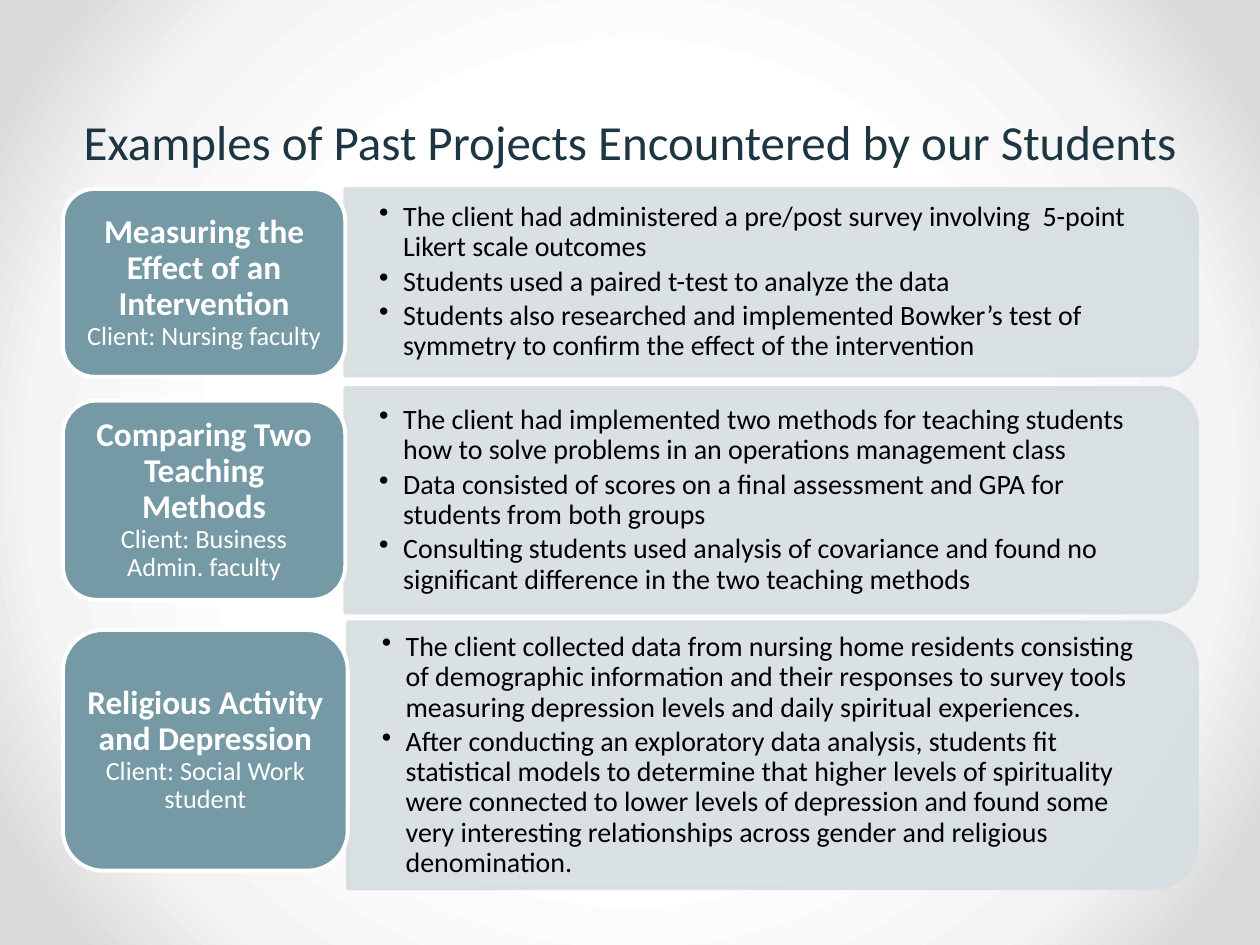
import pptx
import pptx.util
import pptx.dml.color
import pptx.enum.shapes
import pptx.enum.text
import pptx.oxml
import pptx.oxml.ns
from lxml import etree

Inches, Pt = pptx.util.Inches, pptx.util.Pt
SHAPE = pptx.enum.shapes.MSO_SHAPE
ALIGN = pptx.enum.text.PP_ALIGN
ANCHOR = pptx.enum.text.MSO_ANCHOR
qn = pptx.oxml.ns.qn


def rgb(value):
    return pptx.dml.color.RGBColor.from_string(value)


class Deck:
    font = "Calibri"
    title_color, panel_color, label_color = "1D3641", "D6DEE1", "759AA5"

    def __init__(self):
        self.prs = pptx.Presentation()
        self.prs.slide_width, self.prs.slide_height = Inches(10), Inches(7.5)
        self.s = self.prs.slides.add_slide(self.prs.slide_layouts[5])

    def style(self, font, size, color, bold=False):
        font.name, font.size, font.bold = self.font, Pt(size), bold
        font.color.rgb = rgb(color)

    def frame(self, sp, inset_x, inset_y):
        tf = sp.text_frame
        tf.word_wrap = True
        tf.vertical_anchor = ANCHOR.MIDDLE
        tf.margin_left = tf.margin_right = Inches(inset_x)
        tf.margin_top = tf.margin_bottom = Inches(inset_y)
        return tf

    def background(self, stops):
        fill = self.s.background.fill
        fill.solid()
        old = self.s._element.find(".//" + qn("p:bgPr")).find(qn("a:solidFill"))
        gs = "".join(f'<a:gs pos="{pos * 1000}"><a:srgbClr val="{color}"/></a:gs>'
                     for pos, color in stops)
        grad = pptx.oxml.parse_xml(
            f'<a:gradFill {pptx.oxml.ns.nsdecls("a")} rotWithShape="1">'
            f'<a:gsLst>{gs}</a:gsLst><a:path path="circle">'
            '<a:fillToRect l="50000" t="50000" r="50000" b="50000"/>'
            '</a:path></a:gradFill>')
        old.getparent().replace(old, grad)

    def title(self, text, x, y, w, h):
        sp = self.s.shapes.title
        sp.left, sp.top, sp.width, sp.height = map(Inches, (x, y, w, h))
        tf = self.frame(sp, 0.1, 0.05)
        tf.text = text
        p = tf.paragraphs[0]
        p.alignment = ALIGN.CENTER
        self.style(p.font, 28, self.title_color)

    def box(self, kind, fill, line, x, y, w, h):
        sp = self.s.shapes.add_shape(kind, *map(Inches, (x, y, w, h)))
        sp.shadow.inherit = False
        sp.fill.solid()
        sp.fill.fore_color.rgb = rgb(fill)
        sp.line.color.rgb = rgb(line)
        sp.line.width = Pt(2.25)
        return sp

    def panel(self, x, y, w, h):
        sp = self.box(SHAPE.ROUND_2_SAME_RECTANGLE, self.panel_color, self.panel_color,
                      x + (w - h) / 2, y + (h - w) / 2, h, w)
        sp.rotation = 90
        for clr in sp._element.spPr.iter(qn("a:srgbClr")):
            etree.SubElement(clr, qn("a:alpha")).set("val", "90000")

    def bullets(self, items, x, y, w, h):
        sp = self.s.shapes.add_textbox(*map(Inches, (x, y, w, h)))
        tf = self.frame(sp, 0.27, 0.14)
        for i, item in enumerate(items):
            p = tf.add_paragraph() if i else tf.paragraphs[0]
            p.text = item
            p.line_spacing = 0.9
            p.space_after = Pt(2.4)
            self.style(p.font, 16, "000000")
            pPr = p._p.get_or_add_pPr()
            pPr.set("marL", str(Inches(0.19)))
            pPr.set("indent", str(-Inches(0.19)))
            bullet = etree.Element(qn("a:buChar"))
            bullet.set("char", "•")
            pPr.find(qn("a:defRPr")).addprevious(bullet)

    def label(self, heading, client, x, y, w, h):
        sp = self.box(SHAPE.ROUNDED_RECTANGLE, self.label_color, "FFFFFF", x, y, w, h)
        p = self.frame(sp, 0.08, 0.04).paragraphs[0]
        p.alignment = ALIGN.CENTER
        p.line_spacing = 0.9
        r = p.add_run()
        r.text = heading
        self.style(r.font, 19, "FFFFFF", True)
        p.add_line_break()
        r = p.add_run()
        r.text = client
        self.style(r.font, 15, "FFFFFF")


PROJECTS = [
    ("Measuring the Effect of an Intervention", "Client: Nursing faculty",
     ["The client had administered a pre/post survey involving  5-point Likert scale outcomes",
      "Students used a paired t-test to analyze the data",
      "Students also researched and implemented Bowker’s test of symmetry to confirm "
      "the effect of the intervention"],
     2.74, (1.5, 1.49), (1.5, 1.48)),
    ("Comparing Two Teaching Methods", "Client: Business Admin. faculty",
     ["The client had implemented two methods for teaching students how to solve problems "
      "in an operations management class",
      "Data consisted of scores on a final assessment and GPA for students from both groups",
      "Consulting students used analysis of covariance and found no significant difference "
      "in the two teaching methods"],
     2.74, (3.18, 1.58), (3.08, 1.78)),
    ("Religious Activity and Depression", "Client: Social Work student",
     ["The client collected data from nursing home residents consisting of demographic "
      "information and their responses to survey tools measuring depression levels and "
      "daily spiritual experiences.",
      "After conducting an exploratory data analysis, students fit  statistical models to "
      "determine that higher levels of spirituality were connected to lower levels of "
      "depression and found some very interesting relationships across gender and "
      "religious denomination."],
     2.76, (5, 1.91), (4.94, 2.11)),
]


def main():
    left, right = 0.5, 9.5
    deck = Deck()
    deck.background([(50, "FFFFFF"), (76, "F4F4F4"), (92, "DADADA")])
    deck.title("Examples of Past Projects Encountered by our Students",
               left, 0.83, right - left, 0.57)
    for heading, client, items, split, (label_y, label_h), (y, h) in PROJECTS:
        deck.panel(split, y, right - split, h)
        deck.bullets(items, split, y + 0.08, right - split - 0.09, h - 0.16)
        deck.label(heading, client, left, label_y, split - left, label_h)
    deck.prs.save("out.pptx")


if __name__ == "__main__":
    main()
